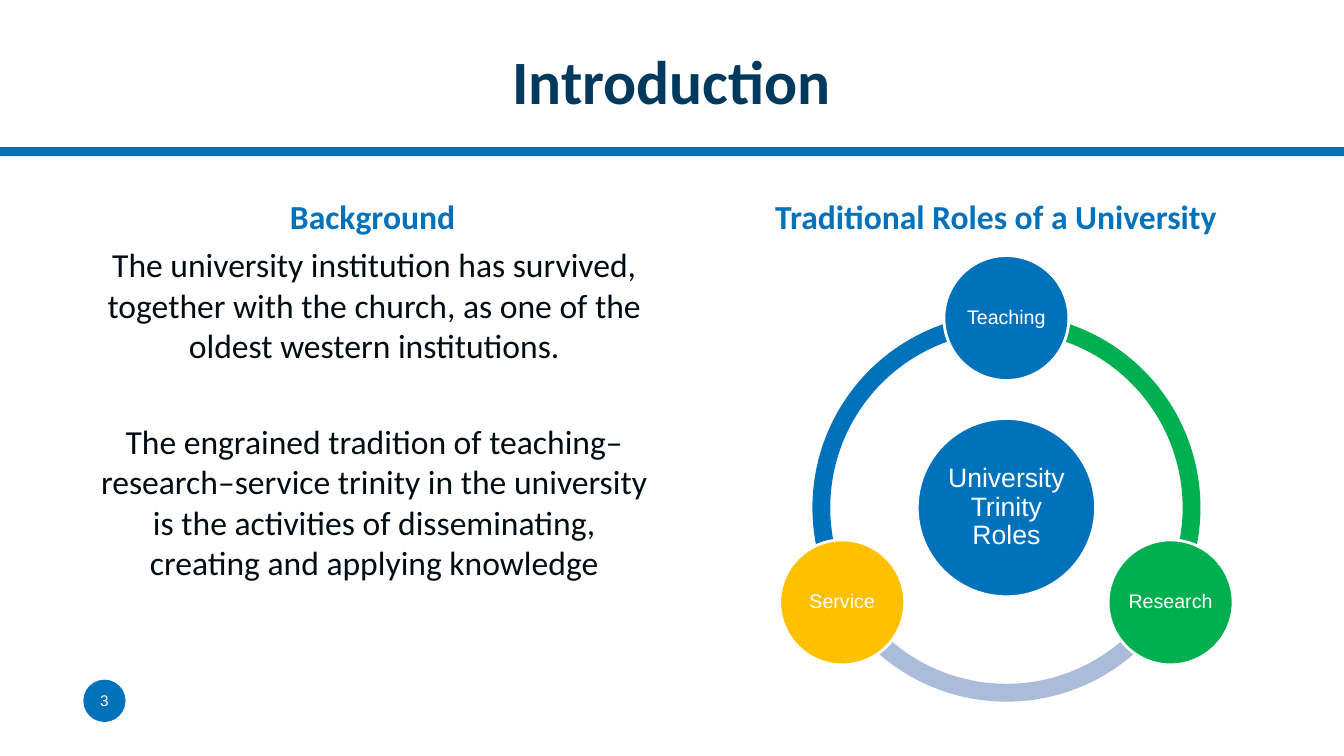
from math import cos, radians, sin

from pptx import Presentation
from pptx.dml.color import RGBColor
from pptx.enum import shapes as sh, text as tx
from pptx.util import Pt

BLUE, NAVY, GREEN, GOLD, MIST = "0072BC", "00395E", "00B050", "FFC000", "ABBCDA"
WHITE, INK = "FFFFFF", "000C14"


def color(hex_code):
    """Turn a hex string into a colour."""
    return RGBColor.from_string(hex_code)


def write(shape, paragraphs, size, font, ink, bold=False, anchor="MIDDLE",
          margins=(5, 3, 5, 3), gap=0, spacing=None):
    """Fill a shape with centred paragraphs."""
    frame = shape.text_frame
    frame.word_wrap = True
    frame.vertical_anchor = tx.MSO_ANCHOR[anchor]
    (frame.margin_left, frame.margin_top,
     frame.margin_right, frame.margin_bottom) = map(Pt, margins)
    frame.text = "\n".join(paragraphs)
    for index, paragraph in enumerate(frame.paragraphs):
        paragraph.alignment = tx.PP_ALIGN.CENTER
        if index:
            paragraph.space_before = Pt(gap)
        if spacing:
            paragraph.line_spacing = spacing
        paragraph.font.size = Pt(size)
        paragraph.font.name = font
        paragraph.font.bold = bold
        paragraph.font.color.rgb = color(ink)


def text_area(slide, box, paragraphs, size, ink, **style):
    """Place a Calibri text box."""
    area = slide.shapes.add_textbox(*map(Pt, box))
    write(area, paragraphs, size, "Calibri", ink, **style)


def solid(slide, kind, box, fill, outline=None):
    """Place a filled preset shape."""
    shape = slide.shapes.add_shape(sh.MSO_SHAPE[kind], *map(Pt, box))
    shape.shadow.inherit = False
    shape.fill.solid()
    shape.fill.fore_color.rgb = color(fill)
    if outline:
        shape.line.color.rgb = color(outline)
        shape.line.width = Pt(2)
    else:
        shape.line.fill.background()
    return shape


def disc(slide, x, y, diameter, fill, label, size):
    """Place a labelled circle centred on a point."""
    box = (x - diameter / 2, y - diameter / 2, diameter, diameter)
    circle = solid(slide, "OVAL", box, fill, WHITE)
    write(circle, [label], size, "Arial", WHITE, margins=(1.5,) * 4, spacing=0.9)


def header(slide, box, title):
    """Place the title above a full-width rule."""
    left, top, width, height = box
    text_area(slide, (left + 48, top + 21.6, width - 96, 70.6), [title], 44, NAVY, bold=True)
    solid(slide, "RECTANGLE", (left, top + height - 6.5, width, 6.5), BLUE)


def heading(slide, box, label):
    """Place a column heading at the foot of its box."""
    text_area(slide, box, [label], 24, BLUE, bold=True, anchor="BOTTOM", margins=(29, 3, 5, 3))


def background_column(slide, box):
    """Place the background heading and its two paragraphs."""
    left, top, width, height = box
    heading(slide, (left, top, width, 50.4), "Background")
    text_area(slide, (left + 12, top + 50.4, width - 12, height - 50.4), [
        "The university institution has survived, together with the church, "
        "as one of the oldest western institutions.",
        "The engrained tradition of teaching–research–service trinity in the university "
        "is the activities of disseminating, creating and applying knowledge",
    ], 24, INK, anchor="TOP", margins=(19.4, 3, 5, 3), gap=39.9)


def roles_column(slide, box):
    """Place the roles heading and the ring of roles around its core."""
    left, top, width, height = box
    heading(slide, (left, top, width, 50.4), "Traditional Roles of a University")
    center_x, center_y = left + 231.5, top + 241.6
    ring, orbit = 277.2, 135.4
    roles = [("Teaching", BLUE, GREEN, 270), ("Research", GREEN, MIST, 30),
             ("Service", GOLD, BLUE, 150)]
    for _, _, arc_fill, angle in roles:
        arc = solid(slide, "BLOCK_ARC",
                    (center_x - ring / 2, center_y - ring / 2, ring, ring), arc_fill)
        arc.adjustments[0] = angle * 0.6
        arc.adjustments[1] = (angle + 120) % 360 * 0.6
        arc.adjustments[2] = 0.046
    disc(slide, center_x, center_y, 127.4, BLUE, "University Trinity Roles", 19)
    for role, fill, _, angle in roles:
        disc(slide, center_x + orbit * cos(radians(angle)),
             center_y + orbit * sin(radians(angle)), 89.3, fill, role, 14)


def page_badge(slide, box, number):
    """Place the page number in a circle."""
    badge = solid(slide, "OVAL", box, BLUE)
    write(badge, [number], 11, "Arial", WHITE, margins=(0,) * 4)


def main():
    """Build and save the slide."""
    deck = Presentation()
    deck.slide_width, deck.slide_height = Pt(960), Pt(540)
    slide = deck.slides.add_slide(deck.slide_layouts[6])
    header(slide, (0, 0, 960, 111.6), "Introduction")
    background_column(slide, (36, 121, 436.3, 336.2))
    roles_column(slide, (487.4, 121, 424.1, 380))
    page_badge(slide, (59.5, 485.5, 30.2, 30.2), "3")
    deck.save("out.pptx")


if __name__ == "__main__":
    main()
